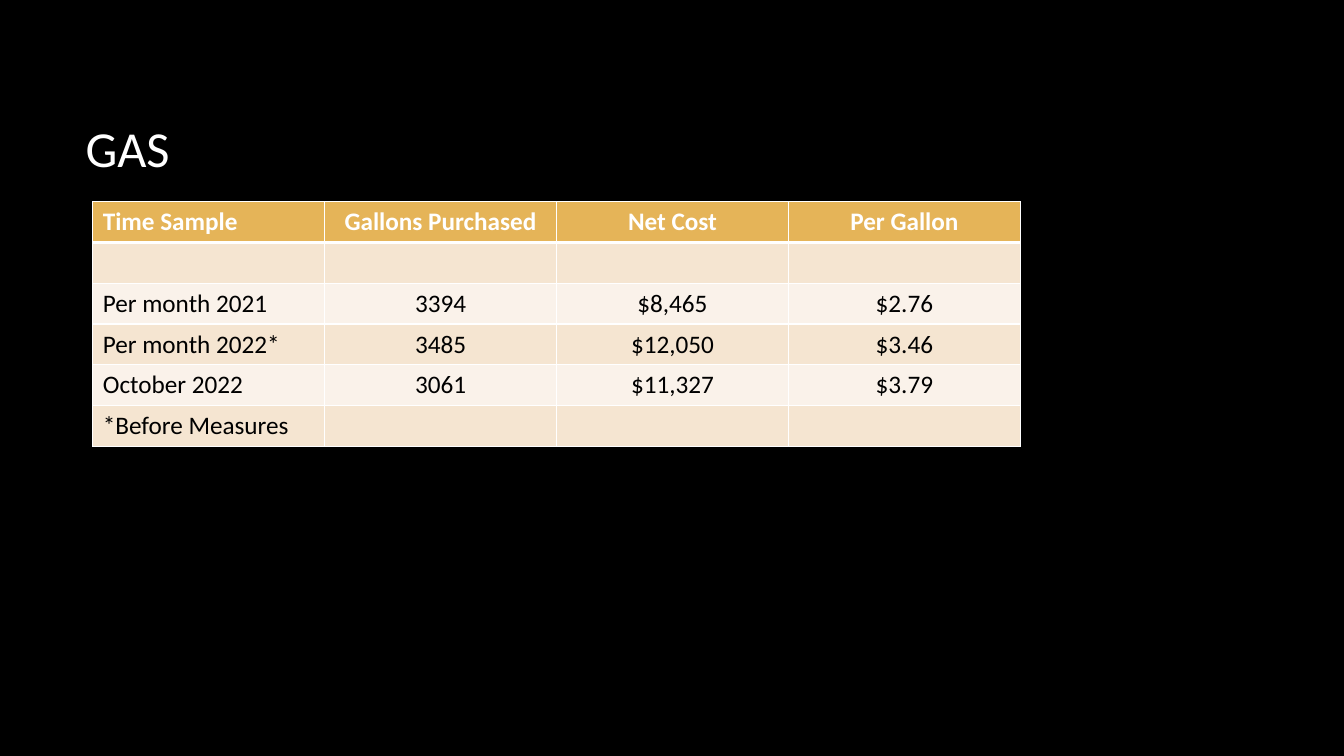
from dataclasses import dataclass

from lxml.etree import SubElement
from pptx import Presentation
from pptx.dml.color import RGBColor
from pptx.enum.text import MSO_ANCHOR as Anchor, PP_ALIGN as Align
from pptx.oxml.ns import qn
from pptx.slide import Slide
from pptx.table import _Cell as Cell
from pptx.text.text import _Paragraph as Paragraph
from pptx.util import Inches, Pt

BLACK = RGBColor(0x00, 0x00, 0x00)
WHITE = RGBColor(0xFF, 0xFF, 0xFF)
GOLD = RGBColor(0xE5, 0xB4, 0x58)
SAND = RGBColor(0xF5, 0xE5, 0xD1)
CREAM = RGBColor(0xFA, 0xF2, 0xEA)

COLUMN_WIDTH = 2.3
ROW_HEIGHT = 0.405


@dataclass
class GasRow:
    label: str = ""
    gallons: str = ""
    cost: str = ""
    per_gallon: str = ""

    def values(self) -> list[str]:
        return [self.label, self.gallons, self.cost, self.per_gallon]


GAS_ROWS = [
    GasRow("Time Sample", "Gallons Purchased", "Net Cost", "Per Gallon"),
    GasRow(),
    GasRow("Per month 2021", "3394", "$8,465", "$2.76"),
    GasRow("Per month 2022*", "3485", "$12,050", "$3.46"),
    GasRow("October 2022", "3061", "$11,327", "$3.79"),
    GasRow("*Before Measures"),
]


def write(p: Paragraph, text: str, size: int, color: RGBColor, bold: bool = False) -> None:
    font = p.font
    if text:
        r = p.add_run()
        r.text = text
        font = r.font
    for name, value in {"name": "Calibri", "size": Pt(size), "bold": bold}.items():
        setattr(font, name, value)
    font.color.rgb = color


def set_borders(cell: Cell, widths: dict[str, int]) -> None:
    tc_pr = cell._tc.get_or_add_tcPr()
    for side, width in widths.items():
        ln = SubElement(tc_pr, qn(f"a:{side}"), w=str(Pt(width)))
        fill = SubElement(ln, qn("a:solidFill"))
        SubElement(fill, qn("a:srgbClr"), val=str(WHITE))


def add_title(s: Slide, text: str) -> None:
    box = s.shapes.add_textbox(Inches(0.75), Inches(0.67), Inches(11.08), Inches(1.59))
    tf = box.text_frame
    for name, value in {"word_wrap": True, "vertical_anchor": Anchor.MIDDLE}.items():
        setattr(tf, name, value)
    write(tf.paragraphs[0], text, 36, WHITE)


def add_gas_table(s: Slide, rows: list[GasRow]) -> None:
    columns = len(rows[0].values())
    table = s.shapes.add_table(
        len(rows), columns, Inches(0.92), Inches(2),
        Inches(COLUMN_WIDTH * columns), Inches(ROW_HEIGHT * len(rows)),
    ).table
    for column in table.columns:
        column.width = Inches(COLUMN_WIDTH)
    for i, row in enumerate(rows):
        table.rows[i].height = Inches(ROW_HEIGHT)
        header = i == 0
        background = GOLD if header else SAND if i % 2 else CREAM
        borders = {"lnL": 1, "lnR": 1, "lnT": 3 if i == 1 else 1, "lnB": 3 if header else 1}
        for j, text in enumerate(row.values()):
            cell = table.cell(i, j)
            set_borders(cell, borders)
            cell.fill.solid()
            cell.fill.fore_color.rgb = background
            p = cell.text_frame.paragraphs[0]
            p.alignment = Align.CENTER if j else Align.LEFT
            write(p, text, 18, WHITE if header else BLACK, header)


def main() -> None:
    prs = Presentation()
    prs.slide_width, prs.slide_height = Inches(13.33), Inches(7.5)
    s = prs.slides.add_slide(prs.slide_layouts[6])
    s.background.fill.solid()
    s.background.fill.fore_color.rgb = BLACK
    add_title(s, "GAS")
    add_gas_table(s, GAS_ROWS)
    prs.save("out.pptx")


if __name__ == "__main__":
    main()
